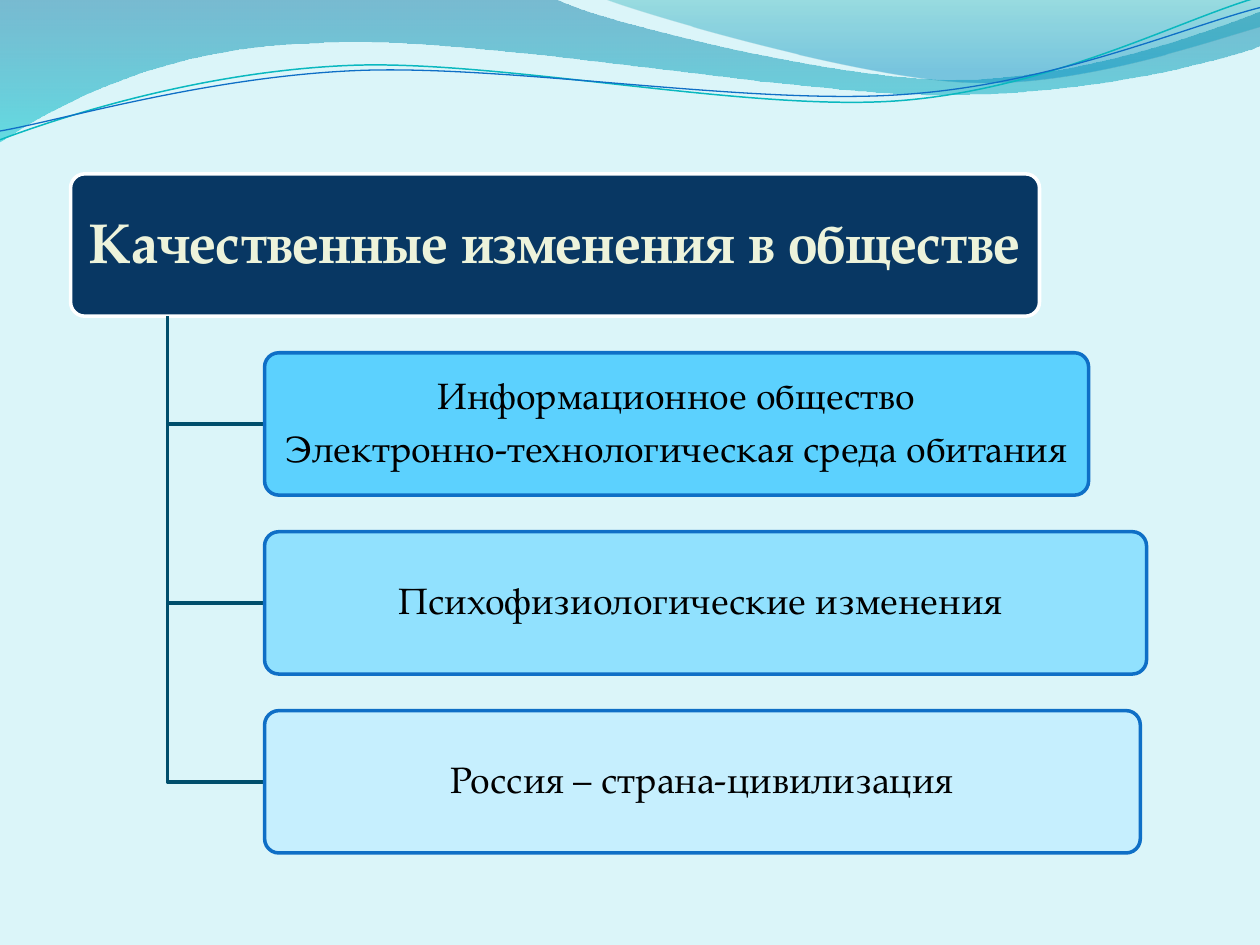
"""Build a slide with a headed list of changes in society under a wave banner."""
from dataclasses import dataclass
from math import cos, radians, sin

from lxml import etree
from pptx import Presentation
from pptx.dml.color import RGBColor
from pptx.enum.shapes import MSO_SHAPE
from pptx.enum.text import MSO_ANCHOR, PP_ALIGN
from pptx.oxml import parse_xml
from pptx.oxml.ns import nsdecls, qn
from pptx.util import Inches, Pt

ROUND = MSO_SHAPE.ROUNDED_RECTANGLE
MIDDLE = MSO_ANCHOR.MIDDLE
CENTER = PP_ALIGN.CENTER


@dataclass(frozen=True)
class Theme:
    font: str = "TeX Gyre Pagella"
    back: str = "DBF5F9"
    navy: str = "083763"
    cream: str = "EDF3DB"
    white: str = "FFFFFF"
    black: str = "000000"
    blue: str = "0F6FC6"
    teal: str = "0AB8BF"
    link: str = "004E6C"
    levels: tuple = ("4FCEFF", "8ADFFF", "C4EFFF")
    head: int = 32
    body: int = 21


@dataclass(frozen=True)
class Stop:
    at: int
    color: str
    alpha: int


@dataclass(frozen=True)
class Wave:
    box: tuple
    start: tuple
    steps: tuple
    stops: tuple = ()
    line: str = ""
    width: float = 0
    turn: float = 0


@dataclass(frozen=True)
class Card:
    text: str
    left: float
    top: float
    width: float
    fill: str
    edge: str
    ink: str
    size: int
    bold: bool = False
    alpha: int = 100


T = Theme()
LEFT, TOP, HIGH, STEP = 0.56, 1.38, 1.13, 1.42
SPINE, INDENT, TILT = 1.33, 2.1, -2.7

WAVES = (
    Wave((-0.01, -0.01, 10.02, 1.14), (0, 0), (
        (4.4, -0.01),
        (4.76, 0.17, 6.64, 0.63, 7.58, 0.63),
        (8.53, 0.63, 9.58, 0.26, 10, 0.09),
        (10.01, 0.36),
        (9.83, 0.44, 8.7, 0.76, 7.46, 0.75),
        (6.22, 0.75, 3.82, 0.28, 2.57, 0.34),
        (1.29, 0.36, 0.46, 0.83, -0.01, 1.13),
        (0, 0),
    ), stops=(Stop(0, "0074A1", 45), Stop(100, "00C6CF", 55))),
    Wave((4.79, -0.01, 5.21, 0.7), (4.79, -0.01), (
        (5.09, 0.11, 6.82, 0.62, 7.69, 0.65),
        (8.56, 0.69, 9.61, 0.32, 10, 0.21),
        (10, 0),
        (4.79, -0.01),
    ), stops=(Stop(0, "00A1A9", 30), Stop(80, "008BBF", 45))),
    Wave((-0.02, 0.22, 10.02, 0.71), (0, 1.11), (
        (0.48, 0.93, 1.58, 0.57, 2.77, 0.52),
        (3.95, 0.47, 5.93, 0.89, 7.13, 0.8),
        (8.33, 0.71, 9.38, 0.15, 9.98, -0.02),
    ), line=T.teal, width=0.85, turn=TILT),
    Wave((-0.02, 0.3, 10.03, 0.58), (0, 1.04), (
        (0.47, 0.96, 1.64, 0.61, 2.83, 0.56),
        (4.03, 0.51, 5.97, 0.84, 7.17, 0.75),
        (8.36, 0.67, 9.41, 0.21, 10, 0.06),
    ), line=T.blue, width=0.75, turn=TILT),
)

ITEMS = (
    ("Информационное общество\nЭлектронно-технологическая среда обитания", 6.54),
    ("Психофизиологические изменения ", 7),
    ("Россия – страна-цивилизация", 6.95),
)


def rgb(color: str) -> RGBColor:
    return RGBColor.from_string(color)


def trace(slide, points: list, close: bool = False):
    """Draw a freeform through points given in inches."""
    spots = [(Inches(x), Inches(y)) for x, y in points]
    pen = slide.shapes.build_freeform(*spots[0])
    pen.add_line_segments(spots[1:], close=close)
    shape = pen.convert_to_shape()
    shape.shadow.inherit = False
    return shape


def stroke(shape, color: str, width: float) -> None:
    shape.line.color.rgb = rgb(color)
    shape.line.width = Pt(width)


def blend(shape, stops: tuple) -> None:
    """Fill a shape with a see-through gradient from top to bottom."""
    marks = "".join(
        f'<a:gs pos="{s.at * 1000}"><a:srgbClr val="{s.color}">'
        f'<a:alpha val="{s.alpha * 1000}"/></a:srgbClr></a:gs>' for s in stops)
    grad = parse_xml(
        f'<a:gradFill {nsdecls("a")}><a:gsLst>{marks}</a:gsLst>'
        '<a:lin ang="5400000" scaled="0"/></a:gradFill>')
    shape.element.spPr.find(qn("a:custGeom")).addnext(grad)


def place(x: float, y: float, wave: Wave) -> tuple:
    """Return a point inside the box of a wave before the box is turned."""
    left, top, wide, high = wave.box
    turn = radians(-wave.turn)
    dx, dy = x - left - wide / 2, y - top - high / 2
    return (Inches(wide / 2 + dx * cos(turn) - dy * sin(turn)),
            Inches(high / 2 + dx * sin(turn) + dy * cos(turn)))


def bend(shape, wave: Wave) -> None:
    """Give a freeform the box, turn and Bezier steps of a wave."""
    left, top, wide, high = map(Inches, wave.box)
    shape.left, shape.top, shape.width, shape.height = left, top, wide, high
    shape.rotation = wave.turn
    route = next(shape.element.iter(qn("a:path")))
    route.set("w", str(wide))
    route.set("h", str(high))
    nodes = route.findall(qn("a:moveTo")) + route.findall(qn("a:lnTo"))
    for node, step in zip(nodes, (wave.start, *wave.steps)):
        if len(step) == 6:
            node.tag = qn("a:cubicBezTo")
        for spot in list(node):
            node.remove(spot)
        for x, y in zip(step[::2], step[1::2]):
            px, py = place(x, y, wave)
            etree.SubElement(node, qn("a:pt"), x=str(px), y=str(py))


def draw_wave(slide, wave: Wave) -> None:
    """Draw one banner wave, either filled or as a line."""
    ends = [wave.start] + [step[-2:] for step in wave.steps]
    shape = trace(slide, ends, bool(wave.stops))
    bend(shape, wave)
    if wave.stops:
        blend(shape, wave.stops)
        shape.line.fill.background()
    else:
        shape.fill.background()
        stroke(shape, wave.line, wave.width)


def draw_link(slide, start: float, end: float) -> None:
    """Draw an elbow from the heading down to a card."""
    shape = trace(slide, [(SPINE, start), (SPINE, end), (INDENT, end)])
    shape.fill.background()
    stroke(shape, T.link, 2)


def draw_card(slide, card: Card) -> None:
    """Draw a rounded card with centred text."""
    shape = slide.shapes.add_shape(
        ROUND, Inches(card.left), Inches(card.top), Inches(card.width), Inches(HIGH))
    shape.adjustments[0] = 0.1
    shape.shadow.inherit = False
    shape.fill.solid()
    shape.fill.fore_color.rgb = rgb(card.fill)
    if card.alpha < 100:
        tint = shape.element.spPr.find(qn("a:solidFill"))[0]
        etree.SubElement(tint, qn("a:alpha")).set("val", str(card.alpha * 1000))
    stroke(shape, card.edge, 2)
    frame = shape.text_frame
    frame.margin_left = frame.margin_right = Inches(0.04)
    frame.margin_top = frame.margin_bottom = Inches(0.03)
    frame.vertical_anchor = MIDDLE
    frame.text = card.text
    for para in frame.paragraphs:
        para.alignment, para.line_spacing = CENTER, 0.9
        font = para.runs[0].font
        font.name, font.size, font.bold = T.font, Pt(card.size), card.bold
        font.color.rgb = rgb(card.ink)
    for para in frame.paragraphs[:-1]:
        para.space_after = Pt(card.size * 0.35)


def main() -> None:
    deck = Presentation()
    deck.slide_width, deck.slide_height = Inches(10), Inches(7.5)
    slide = deck.slides.add_slide(deck.slide_layouts[6])
    slide.background.fill.solid()
    slide.background.fill.fore_color.rgb = rgb(T.back)
    for wave in WAVES:
        draw_wave(slide, wave)
    draw_card(slide, Card("Качественные изменения в обществе", LEFT, TOP, 7.69,
                          T.navy, T.white, T.cream, T.head, bold=True))
    for row, ((text, width), fill) in enumerate(zip(ITEMS, T.levels), 1):
        top = TOP + row * STEP
        draw_link(slide, TOP + HIGH, top + HIGH / 2)
        draw_card(slide, Card(text, INDENT, top, width, fill, T.blue,
                              T.black, T.body, alpha=90))
    deck.save("out.pptx")


if __name__ == "__main__":
    main()
